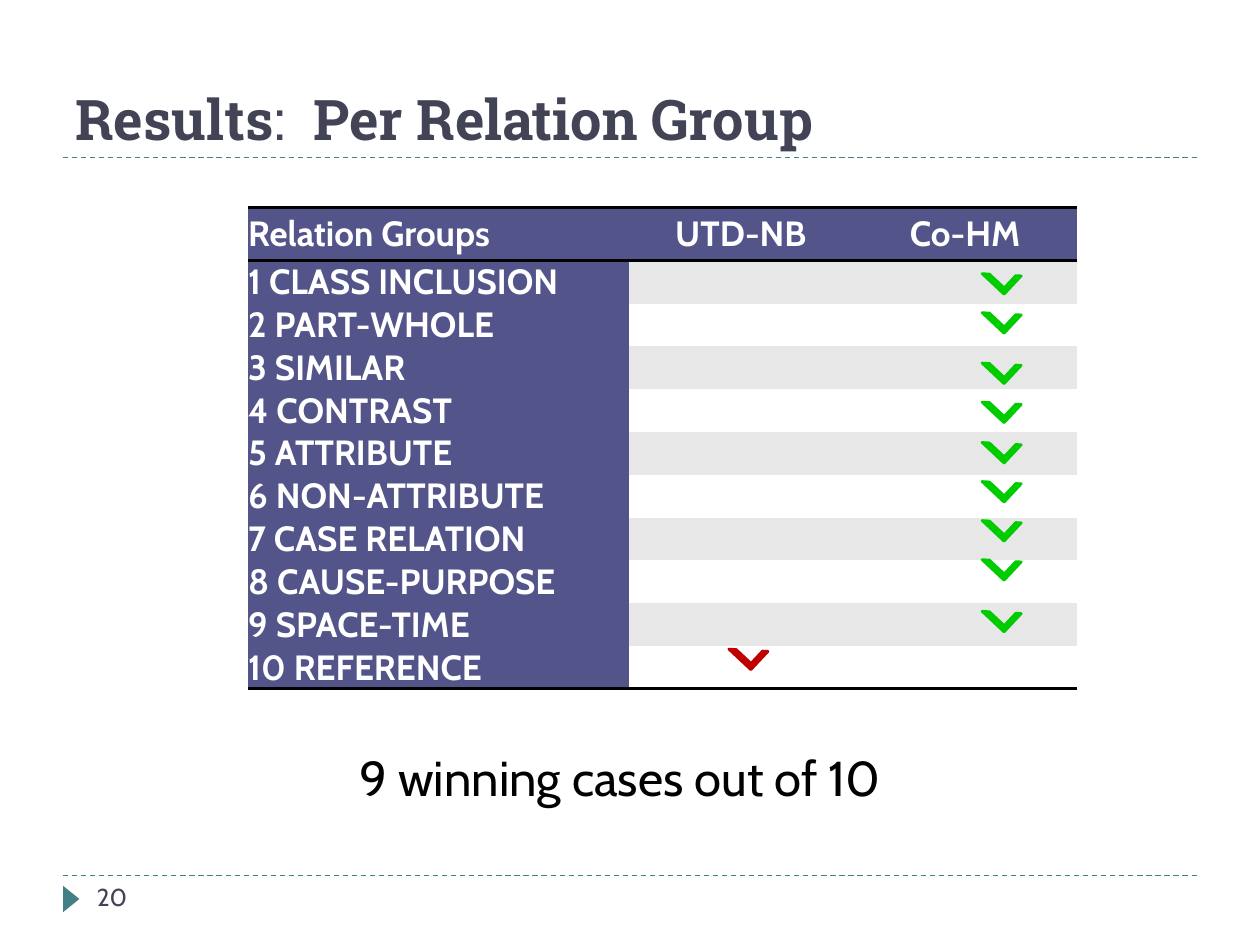
import pptx
import pptx.dml.color
import pptx.enum.dml
import pptx.enum.shapes
import pptx.enum.text
import pptx.oxml
import pptx.oxml.ns
import pptx.util
from lxml import etree

SLIDE_W, SLIDE_H = 10, 7.5
TEAL, INK, PURPLE, GREY = "438086", "424456", "53548A", "E7E7E7"
WHITE, BLACK, GREEN, RED = "FFFFFF", "000000", "00CC00", "C00000"
BODY, HEADING = "Cabin", "Roboto Slab"

TITLE = [("Results", True), (":  ", False), ("Per Relation Group", True)]
HEADERS = ["Relation Groups", "UTD-NB", "Co-HM"]
# group, winning column, top of its tick
GROUPS = [
    ("1 CLASS INCLUSION", 2, 2.08),
    ("2 PART-WHOLE", 2, 2.39),
    ("3 SIMILAR", 2, 2.79),
    ("4 CONTRAST", 2, 3.10),
    ("5 ATTRIBUTE", 2, 3.42),
    ("6 NON-ATTRIBUTE", 2, 3.73),
    ("7 CASE RELATION", 2, 4.04),
    ("8 CAUSE-PURPOSE", 2, 4.35),
    ("9 SPACE-TIME", 2, 4.76),
    ("10 REFERENCE", 1, 5.06),
]
TICKS = {1: (5.82, RED), 2: (7.83, GREEN)}  # column: left, colour
SUMMARY = "9 winning cases out of 10 "
PAGE = "20"

TABLE_LEFT, TABLE_TOP = 1.97, 1.65
COL_WIDTHS = [3.02, 1.78, 1.78]
HEADER_H, ROW_H = 0.42, 0.34
MARGIN = 0.05 * SLIDE_W
RULES = [1.25, 6.95]
NO_STYLE = "{2D5ABB26-0587-4C30-8999-92F81FD0307C}"

CENTER = pptx.enum.text.PP_ALIGN.CENTER
MIDDLE = pptx.enum.text.MSO_ANCHOR.MIDDLE
SHAPE = pptx.enum.shapes.MSO_SHAPE
inch = pptx.util.Inches


def rgb(color):
    return pptx.dml.color.RGBColor.from_string(color)


def paint(fill, color):
    fill.solid()
    fill.fore_color.rgb = rgb(color)


def add_run(p, text, size, color, font=BODY, bold=False):
    r = p.add_run()
    r.text = text
    r.font.size = pptx.util.Pt(size)
    r.font.name = font
    r.font.bold = bold
    r.font.color.rgb = rgb(color)


def add_textbox(s, box, anchor=pptx.enum.text.MSO_ANCHOR.TOP):
    tf = s.shapes.add_textbox(*map(inch, box)).text_frame
    tf.word_wrap = True
    tf.vertical_anchor = anchor
    return tf.paragraphs[0]


def add_rule(s, y):
    line = s.shapes.add_connector(pptx.enum.shapes.MSO_CONNECTOR.STRAIGHT,
                                  inch(MARGIN), inch(y), inch(SLIDE_W - MARGIN), inch(y))
    line.line.color.rgb = rgb(TEAL)
    line.line.width = pptx.util.Pt(0.75)
    line.line.dash_style = pptx.enum.dml.MSO_LINE.DASH
    etree.SubElement(line._element.spPr, pptx.oxml.ns.qn("a:effectLst"))


def add_mark(s, kind, box, rotation, color):
    sp = s.shapes.add_shape(kind, *map(inch, box))
    sp.rotation = rotation
    sp.shadow.inherit = False
    paint(sp.fill, color)
    sp.line.fill.background()
    return sp


def add_tick(s, left, top, color):
    sp = add_mark(s, SHAPE.HALF_FRAME, (left, top, 0.24, 0.2), 223.1, color)
    sp.adjustments[0], sp.adjustments[1] = 0.19, 0.17
    sp.line.color.rgb = rgb(color)
    sp.line.width = pptx.util.Pt(1.5)


def add_borders(cell, sides):
    """Draw black 2 pt borders; sides are in schema order (T before B)."""
    for i, side in enumerate(sides):
        cell._tc.get_or_add_tcPr().insert(i, pptx.oxml.parse_xml(
            f'<a:ln{side} {pptx.oxml.ns.nsdecls("a")} w="{pptx.util.Pt(2)}"><a:solidFill>'
            f'<a:srgbClr val="{BLACK}"/></a:solidFill></a:ln{side}>'))


def add_results_table(s):
    rows = [HEADERS] + [[name, "", ""] for name, _, _ in GROUPS]
    heights = [HEADER_H] + [ROW_H] * len(GROUPS)
    frame = s.shapes.add_table(len(rows), len(HEADERS), inch(TABLE_LEFT), inch(TABLE_TOP),
                               inch(sum(COL_WIDTHS)), inch(sum(heights)))
    table = frame.table
    table._tbl.tblPr.find(pptx.oxml.ns.qn("a:tableStyleId")).text = NO_STYLE
    for col, width in zip(table.columns, COL_WIDTHS):
        col.width = inch(width)
    for i, (texts, height) in enumerate(zip(rows, heights)):
        table.rows[i].height = inch(height)
        for j, text in enumerate(texts):
            cell = table.cell(i, j)
            cell.margin_left = cell.margin_right = cell.margin_top = cell.margin_bottom = 0
            cell.vertical_anchor = MIDDLE
            paint(cell.fill, PURPLE if i == 0 or j == 0 else GREY if i % 2 else WHITE)
            if text:
                p = cell.text_frame.paragraphs[0]
                if j:
                    p.alignment = CENTER
                add_run(p, text, 20, WHITE, bold=True)
            if i == 0:
                add_borders(cell, "TB")
            elif i == len(GROUPS):
                add_borders(cell, "B")


def main():
    prs = pptx.Presentation()
    prs.slide_width, prs.slide_height = inch(SLIDE_W), inch(SLIDE_H)
    s = prs.slides.add_slide(prs.slide_layouts[6])

    for y in RULES:
        add_rule(s, y)
    add_mark(s, SHAPE.ISOSCELES_TRIANGLE, (0.46, 7.07, 0.21, 0.13), 90, TEAL)

    p = add_textbox(s, (MARGIN, 0.17, SLIDE_W - 2 * MARGIN, 1.08),
                    pptx.enum.text.MSO_ANCHOR.BOTTOM)
    for text, bold in TITLE:
        add_run(p, text, 32, INK, HEADING, bold)

    add_results_table(s)
    for _, winner, top in GROUPS:
        left, color = TICKS[winner]
        add_tick(s, left, top, color)

    p = add_textbox(s, (1.55, 5.88, 6.83, 0.57))
    p.alignment = CENTER
    add_run(p, SUMMARY, 28, BLACK)
    add_run(add_textbox(s, (0.67, 6.95, 2.17, 0.4)), PAGE, 14, INK)

    prs.save("out.pptx")


if __name__ == "__main__":
    main()
